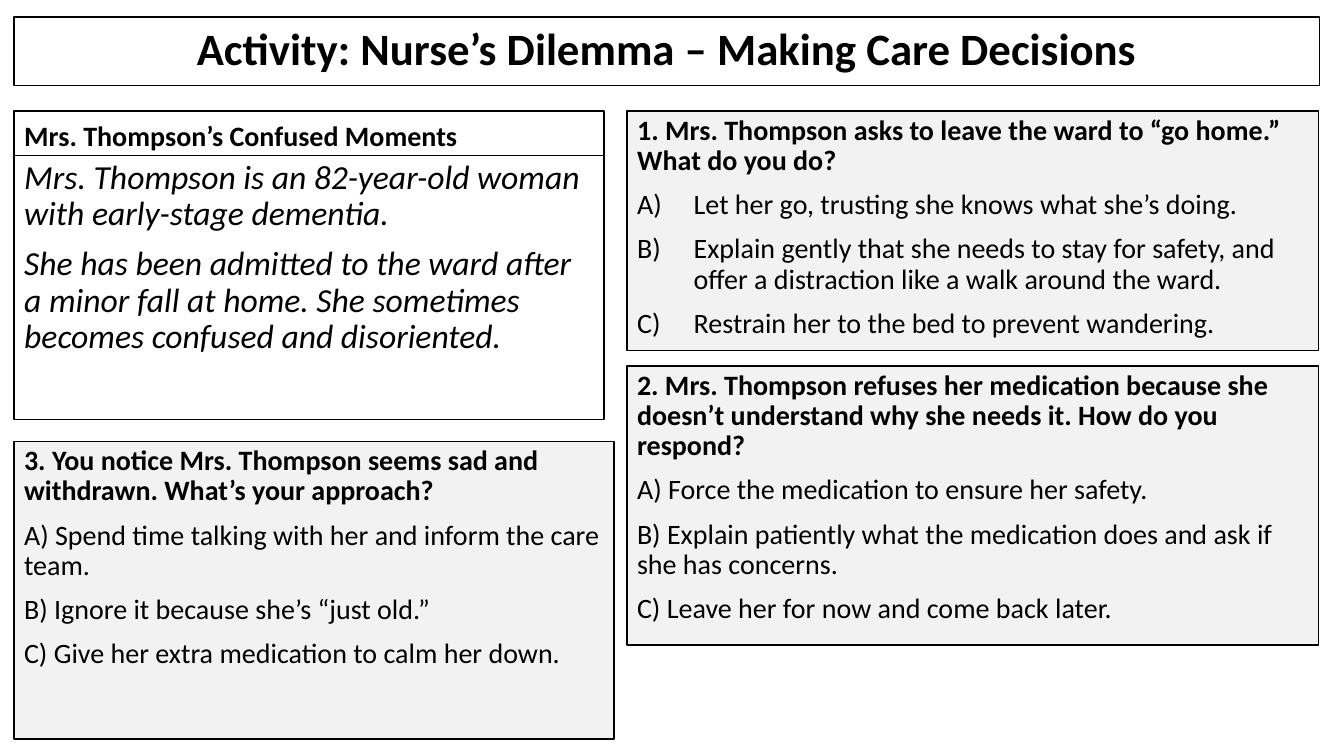
from dataclasses import dataclass

from lxml import etree
from pptx import Presentation
from pptx.dml.color import RGBColor
from pptx.enum import text
from pptx.oxml import ns
from pptx.util import Inches, Pt


@dataclass(frozen=True)
class Theme:
    font: str = "Calibri"
    ink: RGBColor = RGBColor(0, 0, 0)
    paper: RGBColor = RGBColor(255, 255, 255)
    question_fill: RGBColor = RGBColor(0xF2, 0xF2, 0xF2)
    title_size: int = 32
    story_size: int = 24
    body_size: int = 20
    border: int = 1
    line_spacing: float = 0.9
    paragraph_gap: int = 10


THEME = Theme()
LEFT, RIGHT = 0.14, 6.22
STORY_WIDTH, RIGHT_WIDTH = 5.85, 6.86


def frame_box(shape, left, top, width, height, fill, anchor):
    shape.left, shape.top = Inches(left), Inches(top)
    shape.width, shape.height = Inches(width), Inches(height)
    shape.fill.solid()
    shape.fill.fore_color.rgb = fill
    shape.line.color.rgb = THEME.ink
    shape.line.width = Pt(THEME.border)
    frame = shape.text_frame
    frame.word_wrap = True
    frame.auto_size = text.MSO_AUTO_SIZE.NONE
    frame.vertical_anchor = anchor


def set_bullet(paragraph, numbered):
    properties = paragraph._p.get_or_add_pPr()
    indent = Inches(0.56) if numbered else 0
    properties.set("marL", str(indent))
    properties.set("indent", str(-indent))
    if numbered:
        bullet = etree.SubElement(properties, ns.qn("a:buAutoNum"))
        bullet.set("type", "alphaUcParenR")
    else:
        etree.SubElement(properties, ns.qn("a:buNone"))


def write_paragraphs(shape, lines, size, align=text.PP_ALIGN.LEFT,
                     bold_first=False, italic=False, numbered=False):
    frame = shape.text_frame
    frame.text = "\n".join(lines)
    for index, paragraph in enumerate(frame.paragraphs):
        set_bullet(paragraph, numbered and index > 0)
        paragraph.alignment = align
        paragraph.line_spacing = THEME.line_spacing
        paragraph.space_before = Pt(THEME.paragraph_gap if index else 0)
        for run in paragraph.runs:
            run.font.name = THEME.font
            run.font.size = Pt(size)
            run.font.color.rgb = THEME.ink
            run.font.bold = bold_first and index == 0
            run.font.italic = italic


def add_title(shape, title):
    frame_box(shape, LEFT, 0.17, 12.95, 0.68, THEME.paper, text.MSO_ANCHOR.MIDDLE)
    write_paragraphs(shape, [title], THEME.title_size,
                     align=text.PP_ALIGN.CENTER, bold_first=True)


def add_story(heading, body, title, lines):
    frame_box(heading, LEFT, 1.1, STORY_WIDTH, 0.46, THEME.paper, text.MSO_ANCHOR.BOTTOM)
    write_paragraphs(heading, [title], THEME.body_size, bold_first=True)
    frame_box(body, LEFT, 1.54, STORY_WIDTH, 2.62, THEME.paper, text.MSO_ANCHOR.TOP)
    write_paragraphs(body, lines, THEME.story_size, italic=True)


def add_question(shape, left, top, width, height, lines, numbered=False):
    frame_box(shape, left, top, width, height, THEME.question_fill, text.MSO_ANCHOR.TOP)
    write_paragraphs(shape, lines, THEME.body_size, bold_first=True, numbered=numbered)


def add_text_box(slide):
    return slide.shapes.add_textbox(0, 0, Inches(1), Inches(1))


def main():
    presentation = Presentation()
    presentation.slide_width = Inches(13.33)
    presentation.slide_height = Inches(7.5)
    slide = presentation.slides.add_slide(presentation.slide_layouts[4])
    placeholders = {shape.placeholder_format.idx: shape for shape in slide.placeholders}
    unused = placeholders[3].element
    unused.getparent().remove(unused)

    add_title(slide.shapes.title, "Activity: Nurse’s Dilemma – Making Care Decisions")
    add_story(placeholders[1], placeholders[2], "Mrs. Thompson’s Confused Moments", [
        "Mrs. Thompson is an 82-year-old woman with early-stage dementia.",
        "She has been admitted to the ward after a minor fall at home. "
        "She sometimes becomes confused and disoriented.",
    ])
    add_question(placeholders[4], RIGHT, 1.1, RIGHT_WIDTH, 2.38, [
        "1. Mrs. Thompson asks to leave the ward to “go home.” What do you do?",
        "Let her go, trusting she knows what she’s doing.",
        "Explain gently that she needs to stay for safety, "
        "and offer a distraction like a walk around the ward.",
        "Restrain her to the bed to prevent wandering.",
    ], numbered=True)
    add_question(add_text_box(slide), RIGHT, 3.63, RIGHT_WIDTH, 2.77, [
        "2. Mrs. Thompson refuses her medication because she doesn’t "
        "understand why she needs it. How do you respond?",
        "A) Force the medication to ensure her safety.",
        "B) Explain patiently what the medication does and ask if she has concerns.",
        "C) Leave her for now and come back later.",
    ])
    add_question(add_text_box(slide), LEFT, 4.38, 5.95, 2.95, [
        "3. You notice Mrs. Thompson seems sad and withdrawn. What’s your approach?",
        "A) Spend time talking with her and inform the care team.",
        "B) Ignore it because she’s “just old.”",
        "C) Give her extra medication to calm her down.",
    ])
    presentation.save("out.pptx")


if __name__ == "__main__":
    main()
